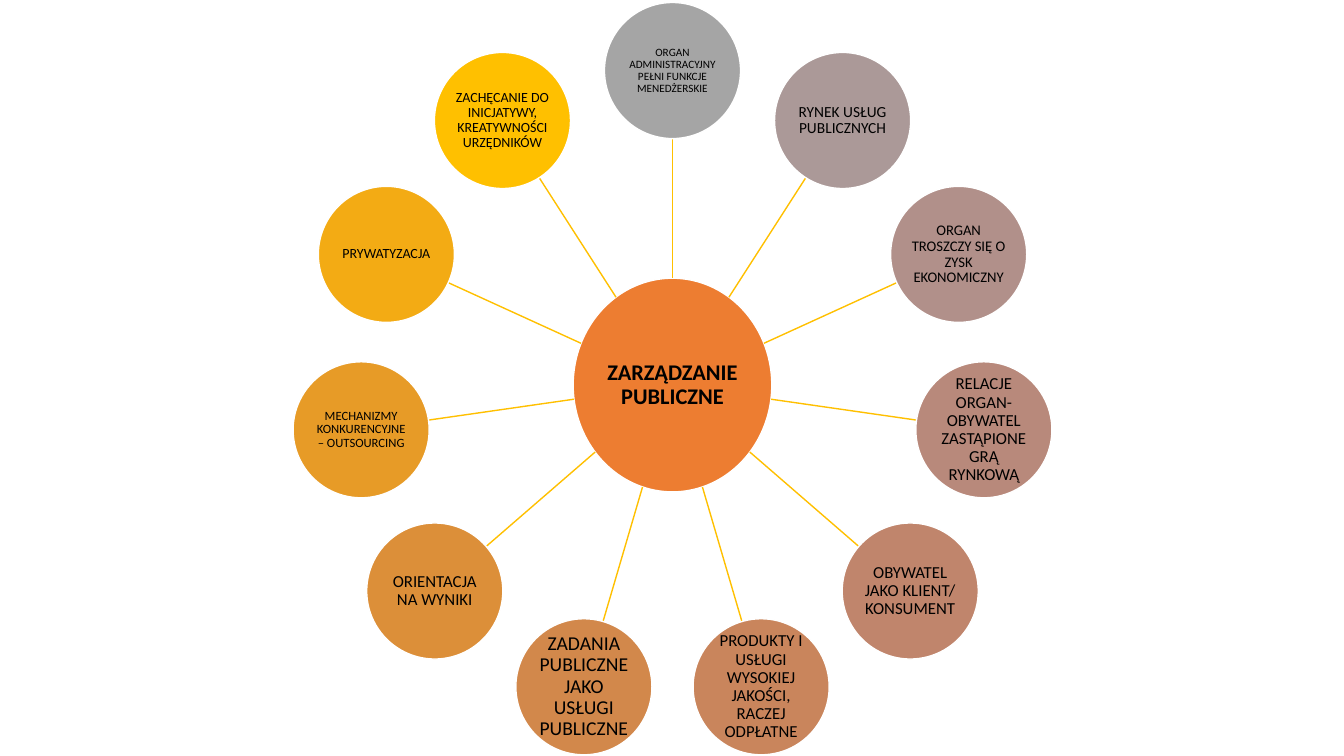
from colorsys import hls_to_rgb
from dataclasses import dataclass
from math import cos, hypot, pi, sin

from lxml.etree import SubElement
from pptx import Presentation
from pptx.dml.color import RGBColor
from pptx.enum.shapes import MSO_CONNECTOR as Connector, MSO_SHAPE as Shape
from pptx.enum.text import MSO_ANCHOR as Anchor, PP_ALIGN as Align
from pptx.oxml.ns import qn
from pptx.util import Inches, Pt

CENTER_X, CENTER_Y = 6.67, 3.82
HUB_WIDTH, HUB_HEIGHT = 1.97, 2.12
NODE_SIZE = 1.35
ORBIT = 3.12
SPOKE_END = 2.44

HUB_TEXT = "ZARZĄDZANIE PUBLICZNE"
FEATURES = [
    ("ORGAN ADMINISTRACYJNY PEŁNI FUNKCJE MENEDŻERSKIE", 8),
    ("RYNEK USŁUG PUBLICZNYCH", 11),
    ("ORGAN TROSZCZY SIĘ O ZYSK EKONOMICZNY", 10.5),
    ("RELACJE ORGAN-OBYWATEL ZASTĄPIONE GRĄ RYNKOWĄ", 12),
    ("OBYWATEL JAKO KLIENT/ KONSUMENT", 12),
    ("PRODUKTY I USŁUGI WYSOKIEJ JAKOŚCI, RACZEJ ODPŁATNE", 12),
    ("ZADANIA PUBLICZNE JAKO USŁUGI PUBLICZNE", 14),
    ("ORIENTACJA NA WYNIKI", 12),
    ("MECHANIZMY KONKURENCYJNE – OUTSOURCING", 9),
    ("PRYWATYZACJA", 10),
    ("ZACHĘCANIE DO INICJATYWY, KREATYWNOŚCI URZĘDNIKÓW", 10),
]


@dataclass(frozen=True)
class Theme:
    font: str = "Calibri"
    hub_size: float = 16
    line_width: float = 1
    text: RGBColor = RGBColor(0, 0, 0)
    outline: RGBColor = RGBColor(255, 255, 255)
    hub: RGBColor = RGBColor(0xED, 0x7D, 0x31)
    spoke: RGBColor = RGBColor(0xFF, 0xC0, 0x00)

    def node(self, share):
        """Blend hue, lightness and saturation from grey (0) to amber (1)."""
        rgb = hls_to_rgb(share * 45.2 / 360, 0.647 - 0.147 * share, share)
        return RGBColor(*(round(255 * part) for part in rgb))


def set_all(target, values):
    for name, value in values.items():
        setattr(target, name, value)


class RadialDiagram:
    def __init__(self, slide, theme):
        self.slide = slide
        self.theme = theme

    def circle(self, center, size, fill, label, points, bold=False):
        (x, y), (width, height) = center, size
        disc = self.slide.shapes.add_shape(
            Shape.OVAL, Inches(x - width / 2), Inches(y - height / 2),
            Inches(width), Inches(height))
        disc.shadow.inherit = False
        disc.fill.solid()
        disc.fill.fore_color.rgb = fill
        disc.line.color.rgb = self.theme.outline
        disc.line.width = Pt(self.theme.line_width)

        frame = disc.text_frame
        margins = ("margin_left", "margin_top", "margin_right", "margin_bottom")
        set_all(frame, dict.fromkeys(margins, Inches(0.01)))
        set_all(frame, {"word_wrap": True, "vertical_anchor": Anchor.MIDDLE})
        paragraph = frame.paragraphs[0]
        set_all(paragraph, {"alignment": Align.CENTER, "line_spacing": 0.9})
        run = paragraph.add_run()
        run.text = label
        set_all(run.font, {"name": self.theme.font, "size": Pt(points), "bold": bold})
        run.font.color.rgb = self.theme.text

    def spoke(self, start, end):
        line = self.slide.shapes.add_connector(
            Connector.STRAIGHT, *(Inches(value) for value in (*start, *end)))
        line.line.color.rgb = self.theme.spoke
        line.line.width = Pt(self.theme.line_width)
        SubElement(line._element.spPr, qn("a:effectLst"))


def orbit_point(angle, radius):
    """Point at a clockwise angle from the top of the hub."""
    return CENTER_X + radius * sin(angle), CENTER_Y - radius * cos(angle)


def hub_radius(angle):
    """Distance from the hub's centre to its elliptical edge."""
    return 1 / hypot(2 * sin(angle) / HUB_WIDTH, 2 * cos(angle) / HUB_HEIGHT)


def main():
    deck = Presentation()
    set_all(deck, {"slide_width": Inches(13.33), "slide_height": Inches(7.5)})
    theme = Theme()
    diagram = RadialDiagram(deck.slides.add_slide(deck.slide_layouts[6]), theme)

    diagram.circle((CENTER_X, CENTER_Y), (HUB_WIDTH, HUB_HEIGHT),
                   theme.hub, HUB_TEXT, theme.hub_size, bold=True)
    for index, (feature, points) in enumerate(FEATURES):
        angle = 2 * pi * index / len(FEATURES)
        diagram.spoke(orbit_point(angle, hub_radius(angle)),
                      orbit_point(angle, SPOKE_END))
        diagram.circle(orbit_point(angle, ORBIT), (NODE_SIZE, NODE_SIZE),
                       theme.node(index / (len(FEATURES) - 1)), feature, points)

    deck.save("out.pptx")


if __name__ == "__main__":
    main()
